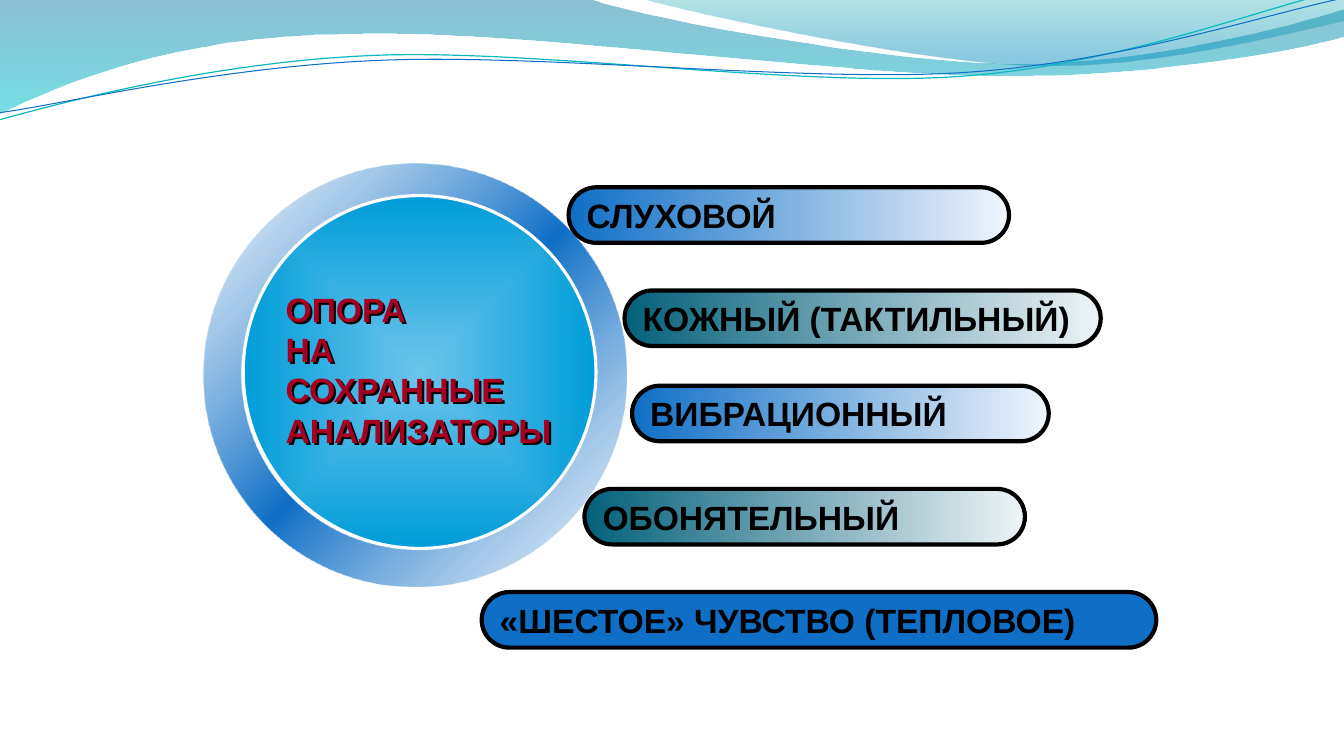
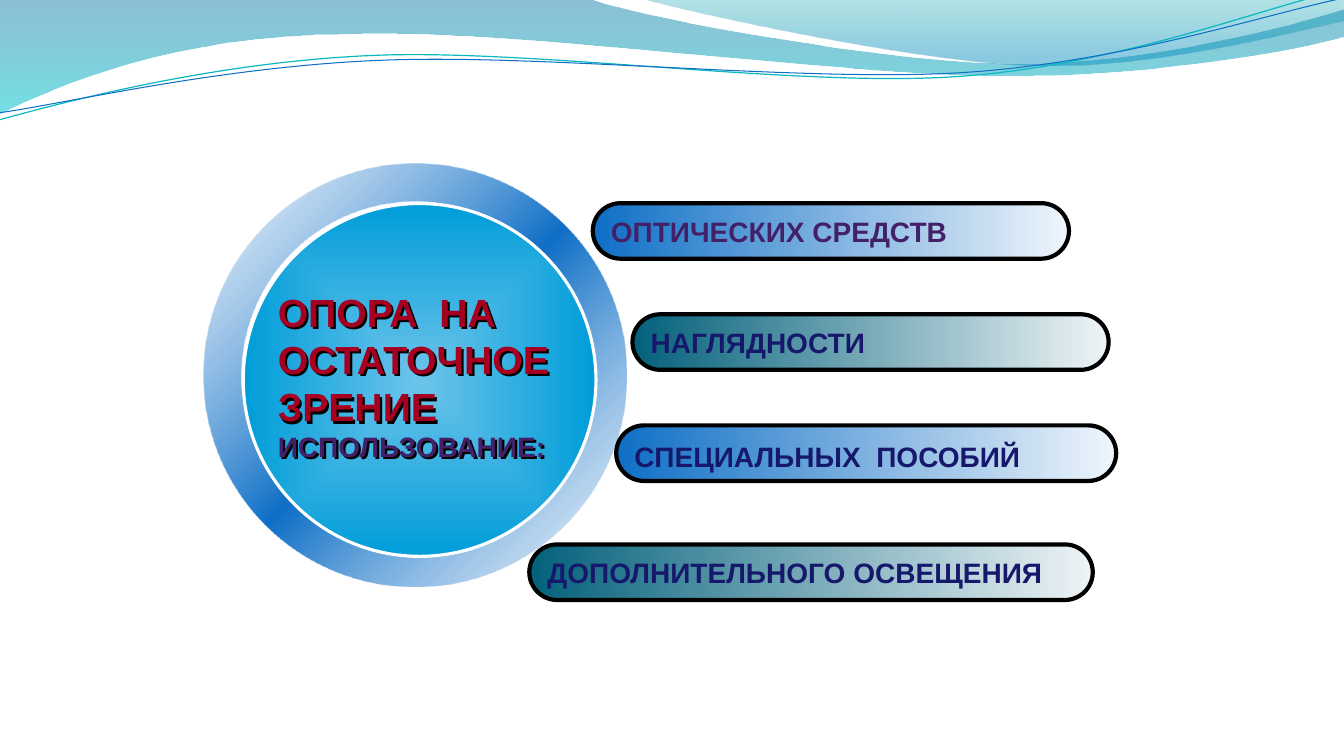
import dataclasses

import pptx
import pptx.dml.color
import pptx.enum.shapes
import pptx.enum.text
import pptx.oxml
import pptx.oxml.ns
import pptx.util

Cm, Pt = pptx.util.Cm, pptx.util.Pt
RGB = pptx.dml.color.RGBColor.from_string
PRESET = pptx.enum.shapes.MSO_SHAPE
qn, nsdecls = pptx.oxml.ns.qn, pptx.oxml.ns.nsdecls


@dataclasses.dataclass(frozen=True)
class Theme:
    font: str = "Arial"
    large: int = 28
    medium: int = 24
    small: int = 20
    black: str = "000000"
    white: str = "FFFFFF"
    red: str = "A50021"
    plum: str = "432169"
    navy: str = "16186C"
    blue: str = "0F6FC6"
    aqua: str = "0AB8BF"
    # Gradient stops: position, colour, opacity in percent
    blue_fade: tuple = ((0, "0F6FC6", 100), (100, "EFF5FB", 100))
    teal_fade: tuple = ((0, "04617B", 100), (100, "EEF4F6", 100))
    ring: tuple = ((0, "6FA9DD", 12), (50, "0F6FC6", 100), (100, "6FA9DD", 12))
    disc: tuple = ((0, "6CC4EA", 100), (100, "009DD9", 100))
    wide_wave: tuple = ((0, "0074A1", 45), (100, "00C6CF", 55))
    right_wave: tuple = ((0, "00A1A9", 30), (80, "008BBF", 45))


THEME = Theme()
PILL_HEIGHT = 1.4
RING = (5.13, 4.12, 10.65)
RING_THICKNESS = 0.09
DISC_LEFT, DISC_SIZE = 6.13, 8.89

# Pills: text, left, top, width, fill, colour, drop of the text (cm)
SLIDES = [
    {
        "title": [(line, THEME.medium, THEME.red)
                  for line in ("ОПОРА", "НА", "СОХРАННЫЕ", "АНАЛИЗАТОРЫ")],
        "title_box": (6.95, 7.14, 7.26, 4.37),
        "disc_top": 4.93,
        "pill_size": THEME.medium,
        "pills": [
            ("СЛУХОВОЙ", 14.33, 4.72, 11.1, THEME.blue_fade, THEME.black, 0),
            ("КОЖНЫЙ (ТАКТИЛЬНЫЙ)", 15.74, 7.32, 12, THEME.teal_fade, THEME.black, 0),
            ("ВИБРАЦИОННЫЙ", 15.93, 9.72, 10.5, THEME.blue_fade, THEME.black, 0),
            ("ОБОНЯТЕЛЬНЫЙ", 14.73, 12.32, 11.1, THEME.teal_fade, THEME.black, 0),
            ("«ШЕСТОЕ» ЧУВСТВО (ТЕПЛОВОЕ)", 12.14, 14.92, 17, THEME.blue, THEME.black, 0),
        ],
    },
    {
        "title": [
            ("ОПОРА  НА", THEME.large, THEME.red),
            ("ОСТАТОЧНОЕ", THEME.large, THEME.red),
            ("ЗРЕНИЕ", THEME.large, THEME.red),
            ("ИСПОЛЬЗОВАНИЕ:", THEME.small, THEME.plum),
        ],
        "title_box": (6.75, 7.14, 7.8, 4.67),
        "disc_top": 5.13,
        "pill_size": THEME.small,
        "pills": [
            ("ОПТИЧЕСКИХ СРЕДСТВ", 14.94, 5.12, 12, THEME.blue_fade, THEME.plum, 0),
            ("НАГЛЯДНОСТИ", 15.94, 7.92, 12, THEME.teal_fade, THEME.navy, 0),
            ("СПЕЦИАЛЬНЫХ  ПОСОБИЙ", 15.53, 10.72, 12.6, THEME.blue_fade, THEME.navy, 0.08),
            ("ДОПОЛНИТЕЛЬНОГО ОСВЕЩЕНИЯ", 13.34, 13.72, 14.2, THEME.teal_fade, THEME.navy, 0),
        ],
    },
]

# Each outline: start point, then lines (x, y) or curves (two controls, end), in cm
WAVES = [
    {"start": (0, -0.02), "fill": THEME.wide_wave, "segments": [
        (14.91, -0.02),
        (16.1, 0.43, 22.48, 1.6, 25.68, 1.6),
        (28.91, 1.6, 32.46, 0.66, 33.87, 0.23),
        (33.9, 0.91),
        (33.3, 1.12, 29.46, 1.93, 25.25, 1.91),
        (21.06, 1.91, 12.93, 0.71, 8.71, 0.86),
        (4.34, 0.89, 1.55, 2.11, -0.02, 2.87)]},
    {"start": (16.23, -0.02), "fill": THEME.right_wave, "segments": [
        (17.25, 0.28, 23.09, 1.57, 26.03, 1.65),
        (28.98, 1.75, 32.56, 0.81, 33.87, 0.53),
        (33.87, 0)]},
    {"start": (-0.02, 3.02), "line": (THEME.aqua, 0.85), "segments": [
        (1.63, 2.57, 5.36, 1.57, 9.37, 1.4),
        (13.39, 1.22, 20.07, 2.21, 24.13, 1.93),
        (28.19, 1.65, 31.8, 0.2, 33.81, -0.25)]},
    {"start": (0, 2.84), "line": (THEME.blue, 0.75), "segments": [
        (1.6, 2.62, 5.54, 1.68, 9.6, 1.52),
        (13.64, 1.35, 20.22, 2.08, 24.26, 1.83),
        (28.32, 1.57, 31.88, 0.36, 33.87, -0.05)]},
]


def set_gradient(shape, stops, angle=None):
    """Fill with the stops along an angle, or outwards from the centre without one."""
    marks = "".join(
        f'<a:gs pos="{position * 1000}"><a:srgbClr val="{colour}">'
        f'<a:alpha val="{opacity * 1000}"/></a:srgbClr></a:gs>'
        for position, colour, opacity in stops)
    if angle is None:
        course = ('<a:path path="shape"><a:fillToRect l="50000" t="50000" '
                  'r="50000" b="50000"/></a:path>')
    else:
        course = f'<a:lin ang="{angle * 60000}" scaled="0"/>'
    shape.fill.gradient()
    properties = shape.element.spPr
    properties.replace(properties.find(qn("a:gradFill")), pptx.oxml.parse_xml(
        f'<a:gradFill {nsdecls("a")} rotWithShape="1">'
        f'<a:gsLst>{marks}</a:gsLst>{course}</a:gradFill>'))


def paint(shape, fill=None, angle=None, line=None):
    """Fill is a colour, gradient stops or None; line is (colour, points) or None."""
    shape.shadow.inherit = False
    if fill is None:
        shape.fill.background()
    elif isinstance(fill, str):
        shape.fill.solid()
        shape.fill.fore_color.rgb = RGB(fill)
    else:
        set_gradient(shape, fill, angle)
    if line is None:
        shape.line.fill.background()
    else:
        colour, points = line
        shape.line.color.rgb = RGB(colour)
        shape.line.width = Pt(points)


def cast_shadow(shape):
    """Give the text of an unfilled shape a hard black shadow."""
    shape.shadow.inherit = False
    shape.element.spPr.find(qn("a:effectLst")).append(pptx.oxml.parse_xml(
        f'<a:outerShdw {nsdecls("a")} blurRad="0" dist="28400" dir="2700000" algn="tl">'
        f'<a:srgbClr val="{THEME.black}"/></a:outerShdw>'))


def write(frame, lines, anchor, drop=0):
    """Put each (text, size, colour) in a paragraph of its own."""
    frame.word_wrap = False
    frame.auto_size = pptx.enum.text.MSO_AUTO_SIZE.NONE
    frame.vertical_anchor = anchor
    frame.margin_left = frame.margin_right = Cm(0.25)
    frame.margin_top, frame.margin_bottom = Cm(0.13 + 2 * drop), Cm(0.13)
    for index, (text, size, colour) in enumerate(lines):
        paragraph = frame.add_paragraph() if index else frame.paragraphs[0]
        paragraph.alignment = pptx.enum.text.PP_ALIGN.LEFT
        run = paragraph.add_run()
        run.text = text
        run.font.name, run.font.size, run.font.bold = THEME.font, Pt(size), True
        run.font.color.rgb = RGB(colour)


def bend(outline, segments):
    """Turn the three straight steps of each curve segment into one Bézier curve."""
    steps = iter(list(outline.element.iter(qn("a:lnTo"))))
    for segment in segments:
        first = next(steps)
        if len(segment) == 2:
            continue
        curve = pptx.oxml.parse_xml(f'<a:cubicBezTo {nsdecls("a")}/>')
        first.addprevious(curve)
        for step in (first, next(steps), next(steps)):
            curve.append(step[0])
            step.getparent().remove(step)


def add_waves(layout, slide):
    """Draw the waves on a slide, then move them into the shared layout."""
    for index, wave in enumerate(WAVES):
        segments = wave["segments"]
        points = [(Cm(segment[i]), Cm(segment[i + 1]))
                  for segment in segments for i in range(0, len(segment), 2)]
        builder = slide.shapes.build_freeform(*map(Cm, wave["start"]))
        builder.add_line_segments(points, close="fill" in wave)
        outline = builder.convert_to_shape()
        bend(outline, segments)
        paint(outline, wave.get("fill"), 90, wave.get("line"))
        outline.element.nvSpPr.cNvPr.set("id", str(100 + index))
        layout.shapes.element.insert(2 + index, outline.element)


def add_preset(slide, preset, left, top, width, height):
    return slide.shapes.add_shape(preset, Cm(left), Cm(top), Cm(width), Cm(height))


def fill_slide(slide, content):
    left, top, size = RING
    ring = add_preset(slide, PRESET.DONUT, left, top, size, size)
    ring.adjustments[0] = RING_THICKNESS
    paint(ring, THEME.ring, 45)
    disc = add_preset(slide, PRESET.OVAL, DISC_LEFT, content["disc_top"], DISC_SIZE, DISC_SIZE)
    paint(disc, THEME.disc, line=(THEME.white, 2.25))

    for text, left, top, width, fill, colour, drop in content["pills"]:
        pill = add_preset(slide, PRESET.ROUNDED_RECTANGLE, left, top, width, PILL_HEIGHT)
        pill.adjustments[0] = 0.5
        paint(pill, fill, 0, (THEME.black, 3))
        write(pill.text_frame, [(text, content["pill_size"], colour)],
              pptx.enum.text.MSO_ANCHOR.MIDDLE, drop=drop)

    title = slide.shapes.title
    title.left, title.top, title.width, title.height = map(Cm, content["title_box"])
    write(title.text_frame, content["title"], pptx.enum.text.MSO_ANCHOR.TOP)
    cast_shadow(title)
    slide.shapes.element.append(title.element)  # in front of the disc


def main():
    deck = pptx.Presentation()
    deck.slide_width, deck.slide_height = Cm(33.87), Cm(19.05)
    title_only = deck.slide_layouts[5]
    slides = [deck.slides.add_slide(title_only) for _ in SLIDES]
    add_waves(title_only, slides[0])
    for slide, content in zip(slides, SLIDES):
        fill_slide(slide, content)
    deck.save("out.pptx")


if __name__ == "__main__":
    main()
